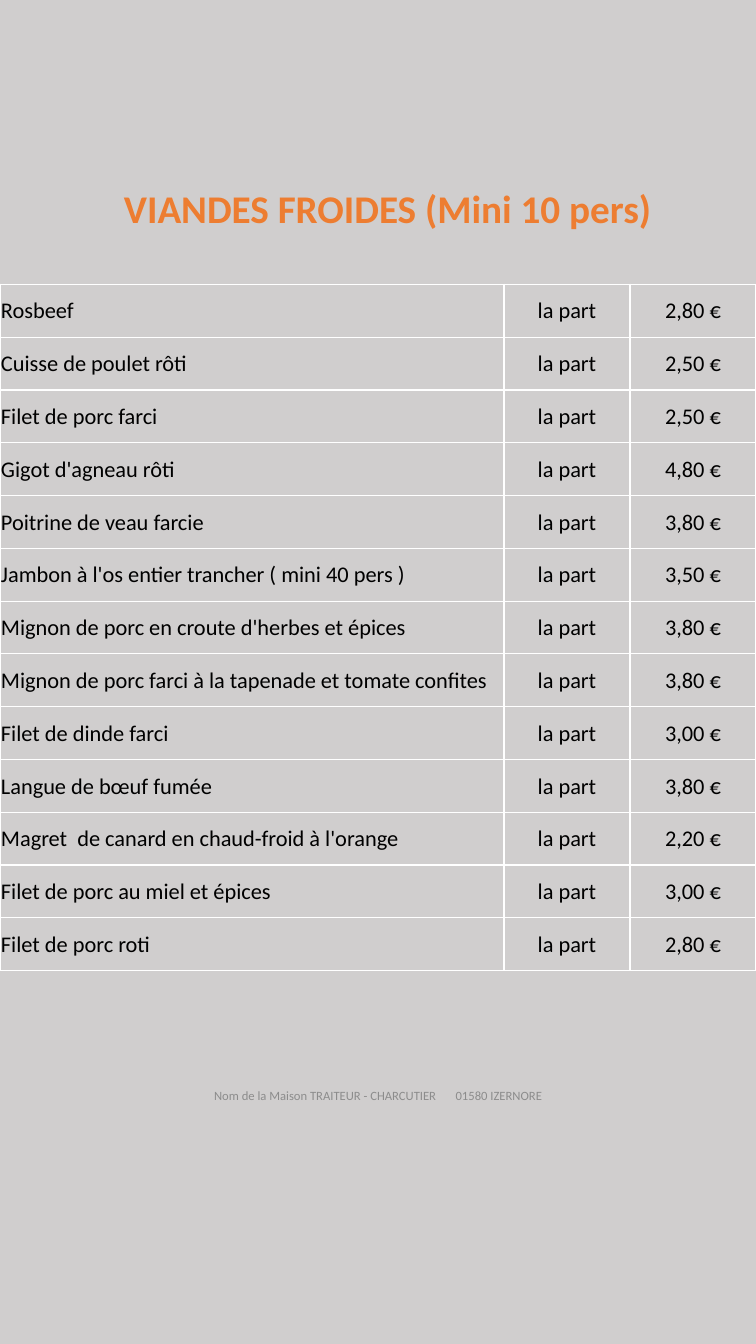
from lxml import etree
from pptx import Presentation
from pptx.dml.color import RGBColor
from pptx.enum.text import MSO_ANCHOR, MSO_AUTO_SIZE, PP_ALIGN
from pptx.oxml.ns import qn
from pptx.util import Inches, Pt

LEFT, CENTER = PP_ALIGN.LEFT, PP_ALIGN.CENTER
MIDDLE = MSO_ANCHOR.MIDDLE
NO_AUTOFIT = MSO_AUTO_SIZE.NONE
TITLE_ONLY = 5

COLORS = {
    "background": "D0CECE",
    "title": "ED7D31",
    "text": "000000",
    "footer": "8C8C8C",
    "border": "FFFFFF",
}

UNIT = "la part"
MEATS = [
    ("Rosbeef", "2,80 €"),
    ("Cuisse de poulet rôti", "2,50 €"),
    ("Filet de porc farci", "2,50 €"),
    ("Gigot d'agneau rôti", "4,80 €"),
    ("Poitrine de veau farcie", "3,80 €"),
    ("Jambon à l'os entier trancher ( mini 40 pers )", "3,50 €"),
    ("Mignon de porc en croute d'herbes et épices", "3,80 €"),
    ("Mignon de porc farci à la tapenade et tomate confites", "3,80 €"),
    ("Filet de dinde farci", "3,00 €"),
    ("Langue de bœuf fumée", "3,80 €"),
    ("Magret  de canard en chaud-froid à l'orange", "2,20 €"),
    ("Filet de porc au miel et épices", "3,00 €"),
    ("Filet de porc roti", "2,80 €"),
]


def add_span(para, text, size=16, color="text", bold=False, align=LEFT, spacing=0):
    para.alignment = align
    span = para.add_run()
    span.text = text
    font = span.font
    font.name = "Calibri"
    font.size = Pt(size)
    font.bold = bold
    font.color.rgb = RGBColor.from_string(COLORS[color])
    if spacing:
        font._element.set("spc", str(int(spacing * 100)))


class MenuPage:
    def __init__(self, page):
        self.page = page
        fill = page.background.fill
        fill.solid()
        fill.fore_color.rgb = RGBColor.from_string(COLORS["background"])

    def title(self, text, left, top, width, height):
        box = self.page.shapes.title
        box.left, box.top = Inches(left), Inches(top)
        box.width, box.height = Inches(width), Inches(height)
        frame = box.text_frame
        frame.word_wrap = False
        frame.auto_size = NO_AUTOFIT
        frame.vertical_anchor = MIDDLE
        para = frame.paragraphs[0]
        para.line_spacing = 1.0
        add_span(para, text, size=28, color="title", bold=True)

    def footer(self, name, town, left, top, width, height):
        box = self.page.shapes.add_textbox(
            Inches(left), Inches(top), Inches(width), Inches(height)
        )
        frame = box.text_frame
        frame.word_wrap = True
        frame.vertical_anchor = MIDDLE
        para = frame.paragraphs[0]
        for text, spacing in ((name, 0), (" ", 12), (town, 0)):
            add_span(para, text, size=9, color="footer", align=CENTER, spacing=spacing)

    def border(self, cell):
        properties = cell._tc.get_or_add_tcPr()
        for side in ("a:lnL", "a:lnR", "a:lnT", "a:lnB"):
            line = etree.SubElement(properties, qn(side), w=str(Pt(1)))
            fill = etree.SubElement(line, qn("a:solidFill"))
            etree.SubElement(fill, qn("a:srgbClr"), val=COLORS["border"])

    def table(self, rows, widths, left, top, height):
        table = self.page.shapes.add_table(
            len(rows), len(widths), Inches(left), Inches(top),
            Inches(sum(widths)), Inches(height),
        ).table
        table.first_row = False
        table.horz_banding = False
        for column, width in zip(table.columns, widths):
            column.width = Inches(width)
        for row, values in zip(table.rows, rows):
            for index, (cell, text) in enumerate(zip(row.cells, values)):
                cell.margin_left = cell.margin_right = cell.margin_top = Inches(0.01)
                cell.margin_bottom = 0
                cell.vertical_anchor = MIDDLE
                self.border(cell)
                cell.fill.background()
                align = CENTER if index else LEFT
                add_span(cell.text_frame.paragraphs[0], text, align=align)


def main():
    deck = Presentation()
    deck.slide_width, deck.slide_height = Inches(7.5), Inches(13.33)
    menu = MenuPage(deck.slides.add_slide(deck.slide_layouts[TITLE_ONLY]))
    menu.footer("Nom de la Maison TRAITEUR - CHARCUTIER", "01580 IZERNORE",
                1.89, 10.51, 3.72, 0.71)
    menu.title("VIANDES FROIDES (Mini 10 pers)", 1.13, 1.78, 5.49, 0.57)
    rows = [(meat, UNIT, price) for meat, price in MEATS]
    menu.table(rows, (5, 1.25, 1.25), 0, 2.82, 6.81)
    deck.save("out.pptx")


if __name__ == "__main__":
    main()
